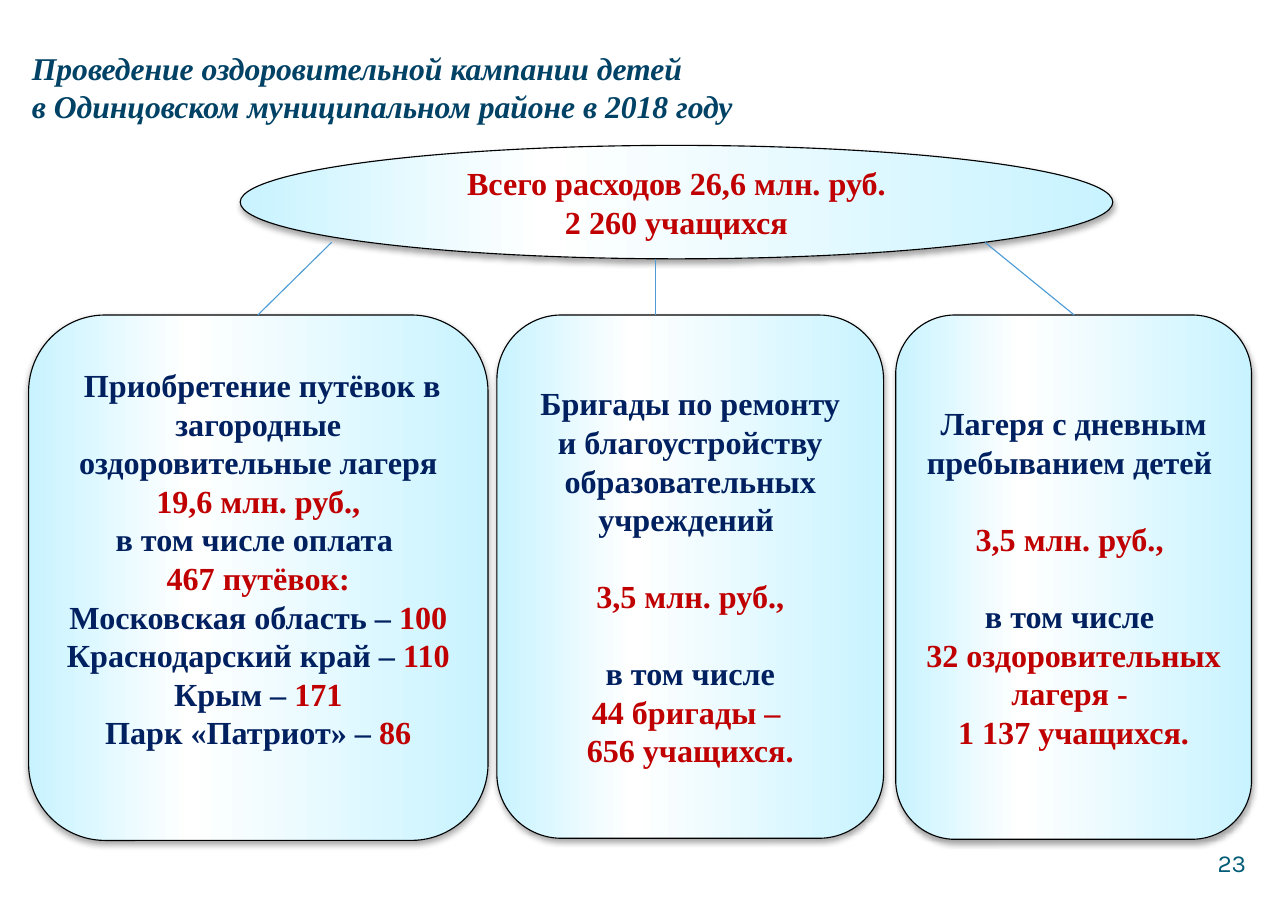
from lxml.etree import SubElement
from pptx import Presentation
from pptx.dml.color import RGBColor
from pptx.enum.shapes import MSO_CONNECTOR, MSO_SHAPE
from pptx.enum.text import MSO_ANCHOR, MSO_AUTO_SIZE, PP_ALIGN
from pptx.oxml.ns import qn
from pptx.util import Pt

PX = 9144
COLORS = {
    "title": "004265",
    "navy": "002060",
    "red": "C00000",
    "sky": "C8F3FF",
    "white": "FFFFFF",
    "outline": "000000",
    "link": "4E9CD6",
    "number": "005B76",
}
PANEL_GRADIENT = ((0, "sky"), (35, "white"), (100, "sky"))

TITLE = "Проведение оздоровительной кампании детей\nв Одинцовском муниципальном районе в 2018 году"
TOTAL = [
    [("Всего расходов 26,6 млн. руб.", "red")],
    [("2 260 учащихся", "red")],
]
VOUCHERS = [
    [(" Приобретение путёвок в загородные оздоровительные лагеря", "navy")],
    [("19,6 млн. руб.,", "red")],
    [("в том числе оплата ", "navy")],
    [("467 путёвок:", "red")],
    [("Московская область – ", "navy"), ("100", "red")],
    [("Краснодарский край – ", "navy"), ("110", "red")],
    [("Крым – ", "navy"), ("171", "red")],
    [("Парк «Патриот» – ", "navy"), ("86", "red")],
]
BRIGADES = [
    [("Бригады по ремонту и благоустройству образовательных учреждений ", "navy")],
    [("3,5 млн. руб.,", "red")],
    [(" в том числе ", "navy")],
    [("44 бригады – ", "red")],
    [("656 учащихся.", "red")],
]
DAY_CAMPS = [
    [("Лагеря с дневным пребыванием детей ", "navy")],
    [("3,5 млн. руб., ", "red")],
    [("в том числе ", "navy")],
    [("32 оздоровительных лагеря - ", "red")],
    [("1 137 учащихся.", "red")],
]


def px(*lengths):
    return [length * PX for length in lengths]


def rgb(name):
    return RGBColor.from_string(COLORS[name])


def write(shape, paragraphs, size=21, font="Times New Roman", bold=True, italic=False,
          align=PP_ALIGN.CENTER, leading=25.2, gaps=(), margin=6, bottom=6):
    frame = shape.text_frame
    frame.word_wrap = True
    frame.auto_size = MSO_AUTO_SIZE.NONE
    frame.vertical_anchor = MSO_ANCHOR.MIDDLE
    frame.margin_left = frame.margin_right = 11 * PX
    frame.margin_top, frame.margin_bottom = px(margin, bottom)
    for index, runs in enumerate(paragraphs):
        paragraph = frame.add_paragraph() if index else frame.paragraphs[0]
        paragraph.alignment = align
        paragraph.space_before = Pt(leading if index in gaps else 0)
        if leading:
            paragraph.line_spacing = Pt(leading)
        for text, color in runs:
            for row, line in enumerate(text.split("\n")):
                if row:
                    paragraph.add_line_break()
                run = paragraph.add_run()
                run.text = line
                run.font.size = Pt(size)
                run.font.name = font
                run.font.bold = bold
                run.font.italic = italic
                run.font.color.rgb = rgb(color)


def add_title(slide):
    title = slide.shapes.title
    title.left, title.top, title.width, title.height = px(18, 43, 700, 71)
    write(title, [[(TITLE, "title")]], size=20.7, italic=True,
          align=PP_ALIGN.LEFT, margin=5, bottom=5)


def add_panel(slide, kind, box, paragraphs, **text_format):
    panel = slide.shapes.add_shape(kind, *px(*box))
    panel.fill.gradient()
    panel.fill.gradient_angle = 0
    panel.line.color.rgb = rgb("outline")
    panel.line.width = Pt(0.75)
    panel.shadow.inherit = False
    properties = panel._element.spPr

    stops = properties.find(".//" + qn("a:gsLst"))
    for stop in list(stops):
        stops.remove(stop)
    for percent, color in PANEL_GRADIENT:
        stop = SubElement(stops, qn("a:gs"), pos=str(percent * 1000))
        SubElement(stop, qn("a:srgbClr"), val=COLORS[color])

    shadow = SubElement(properties.find(qn("a:effectLst")), qn("a:outerShdw"),
                        blurRad=str(Pt(4)), dist=str(Pt(2)), dir="5400000", rotWithShape="0")
    shade = SubElement(shadow, qn("a:srgbClr"), val=COLORS["outline"])
    SubElement(shade, qn("a:alpha"), val="35000")
    write(panel, paragraphs, **text_format)


def add_link(slide, *ends):
    link = slide.shapes.add_connector(MSO_CONNECTOR.STRAIGHT, *px(*ends))
    link.line.color.rgb = rgb("link")
    link.line.width = Pt(0.75)
    SubElement(link._element.spPr, qn("a:effectLst"))


def add_page_number(slide):
    number = slide.shapes.add_textbox(*px(1071, 761, 71, 44))
    write(number, [[("23", "number")]], size=16, font="Karla", bold=False,
          align=PP_ALIGN.RIGHT, leading=0, margin=5, bottom=5)


def main():
    deck = Presentation()
    deck.slide_width, deck.slide_height = px(1169, 827)
    slide = deck.slides.add_slide(deck.slide_layouts[5])
    add_title(slide)
    add_panel(slide, MSO_SHAPE.OVAL, (218, 132, 792, 103), TOTAL)
    columns = (
        (26, 417, 477, VOUCHERS, {"bottom": 41}),
        (451, 351, 475, BRIGADES, {"gaps": (1, 2)}),
        (813, 323, 476, DAY_CAMPS, {"gaps": (1, 2)}),
    )
    for left, width, height, paragraphs, text_format in columns:
        add_panel(slide, MSO_SHAPE.ROUNDED_RECTANGLE, (left, 286, width, height),
                  paragraphs, **text_format)
    for start, top, end in ((301, 220, 234), (595, 235, 595), (894, 220, 975)):
        add_link(slide, start, top, end, 286)
    add_page_number(slide)
    deck.save("out.pptx")


if __name__ == "__main__":
    main()
